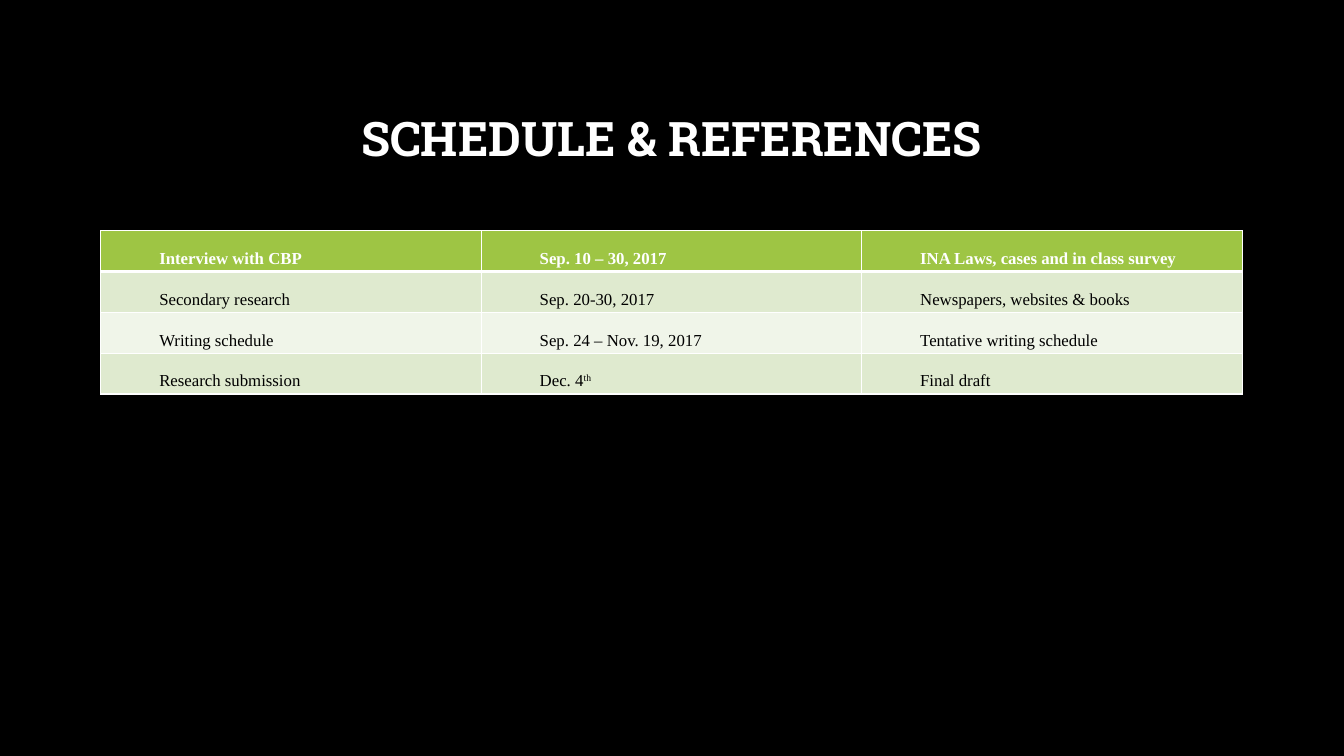
from lxml import etree
from pptx import Presentation
from pptx.dml.color import RGBColor
from pptx.enum.text import MSO_ANCHOR, PP_ALIGN
from pptx.oxml.ns import qn
from pptx.util import Inches, Pt

CENTER = PP_ALIGN.CENTER
MIDDLE = MSO_ANCHOR.MIDDLE

THEME = {
    "background": "000000",
    "light_text": "FFFFFF",
    "dark_text": "000000",
    "border": "FFFFFF",
    "header_fill": "9EC544",
    "band_fills": ["F0F5E9", "DFEACF"],
    "title_font": "Roboto Slab",
    "table_font": "Times New Roman",
    "title_size": 34,
    "table_size": 12,
}

SCHEDULE = [
    ["Interview with CBP", "Sep. 10 – 30, 2017", "INA Laws, cases and in class survey"],
    ["Secondary research", "Sep. 20-30, 2017", "Newspapers, websites & books"],
    ["Writing schedule", "Sep. 24 – Nov. 19, 2017", "Tentative writing schedule"],
    ["Research submission", "Dec. 4", "Final draft"],
]


def style_span(span, font, size, color, bold):
    span.font.name = font
    span.font.size = Pt(size)
    span.font.color.rgb = RGBColor.from_string(color)
    span.font.bold = bold


def set_borders(cell, widths):
    properties = cell._tc.get_or_add_tcPr()
    for position, (side, width) in enumerate(widths.items()):
        line = etree.Element(qn(f"a:ln{side}"), w=str(Pt(width)))
        fill = etree.SubElement(line, qn("a:solidFill"))
        etree.SubElement(fill, qn("a:srgbClr"), val=THEME["border"])
        properties.insert(position, line)


deck = Presentation()
deck.slide_width = Inches(13.33)
deck.slide_height = Inches(7.5)
page = deck.slides.add_slide(deck.slide_layouts[6])
page.background.fill.solid()
page.background.fill.fore_color.rgb = RGBColor.from_string(THEME["background"])

title_box = page.shapes.add_textbox(Inches(1), Inches(0.67), Inches(11.32), Inches(1.45))
title_frame = title_box.text_frame
title_frame.word_wrap = True
title_frame.vertical_anchor = MIDDLE
title_frame.text = "SCHEDULE & REFERENCES"
title_para = title_frame.paragraphs[0]
title_para.alignment = CENTER
title_para.line_spacing = 0.9
style_span(title_para.runs[0], THEME["title_font"], THEME["title_size"], THEME["light_text"], True)

table = page.shapes.add_table(
    len(SCHEDULE), len(SCHEDULE[0]), Inches(1), Inches(2.29), Inches(11.32), Inches(1.62)
).table

for row_index, entries in enumerate(SCHEDULE):
    is_header = row_index == 0
    fill_color = THEME["header_fill"] if is_header else THEME["band_fills"][row_index % 2]
    text_color = THEME["light_text"] if is_header else THEME["dark_text"]
    widths = {"L": 1, "R": 1, "T": 3 if row_index == 1 else 1, "B": 3 if is_header else 1}
    for column_index, entry in enumerate(entries):
        cell = table.cell(row_index, column_index)
        cell.margin_left = cell.margin_right = Inches(0.08)
        cell.margin_top = cell.margin_bottom = 0
        cell.text_frame.text = entry
        para = cell.text_frame.paragraphs[0]
        para.line_spacing = 2
        para._p.get_or_add_pPr().set("indent", str(Inches(0.5)))
        if entry == "Dec. 4":
            ordinal = para.add_run()
            ordinal.text = "th"
            ordinal.font._element.set("baseline", "30000")
        for span in para.runs:
            style_span(span, THEME["table_font"], THEME["table_size"], text_color, is_header)
        set_borders(cell, widths)
        cell.fill.solid()
        cell.fill.fore_color.rgb = RGBColor.from_string(fill_color)

deck.save("out.pptx")
